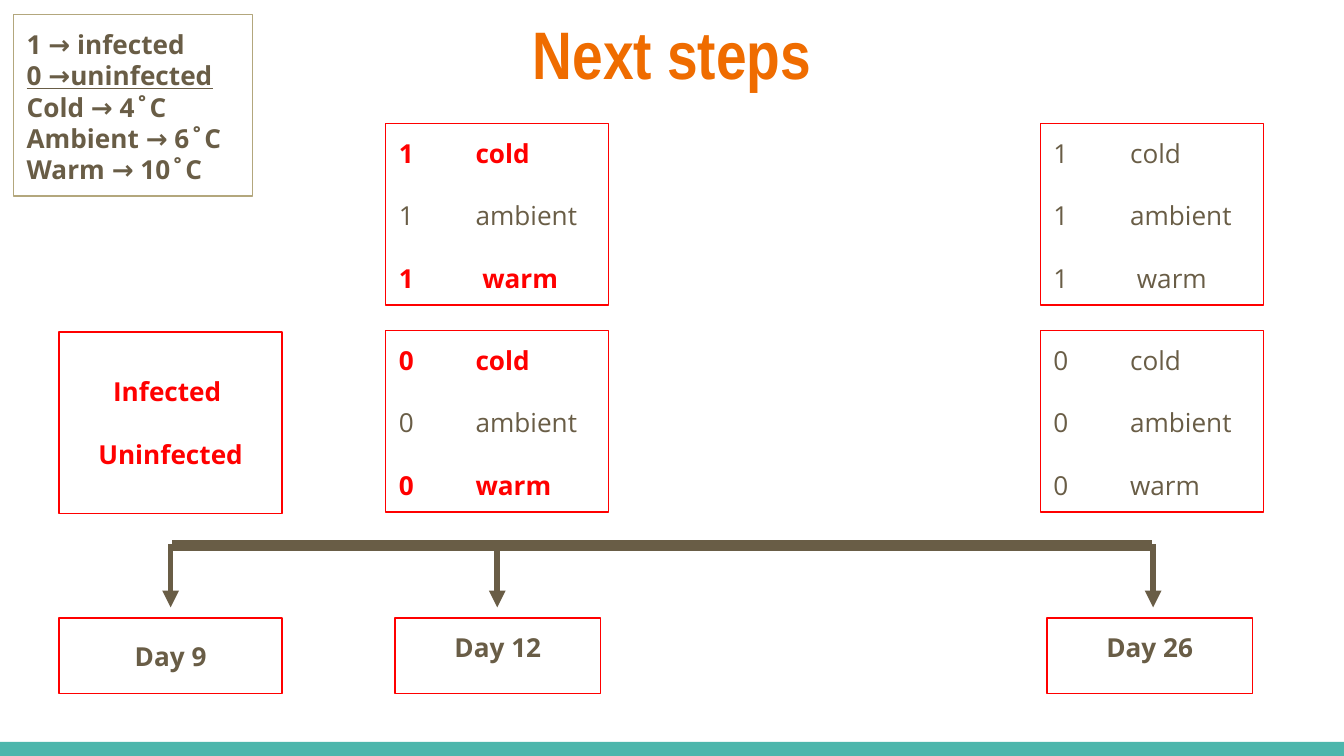
from pptx import Presentation
from pptx.dml.color import RGBColor
from pptx.enum.shapes import MSO_CONNECTOR as Connector, MSO_SHAPE as Shape
from pptx.enum.text import MSO_ANCHOR as Anchor, PP_ALIGN as Align
from pptx.oxml.ns import qn
from pptx.util import Inches, Pt
from lxml.etree import SubElement

RED, BROWN, TAN, ORANGE, TEAL = "FF0000", "695D46", "B3A77D", "EF6C00", "4DB6AC"


def color(value):
    return RGBColor.from_string(value)


def add_box(left, top, width, height, lines, border=RED, align=Align.LEFT,
            anchor=Anchor.TOP, gap=0, size=14, name="Open Sans"):
    place = [Inches(length) for length in (left, top, width, height)]
    if border:
        box = page.shapes.add_shape(Shape.RECTANGLE, *place)
        box.shadow.inherit = False
        box.fill.background()
        box.line.color.rgb = color(border)
        box.line.width = Pt(0.75)
    else:
        box = page.shapes.add_textbox(*place)
    frame = box.text_frame
    frame.word_wrap = True
    frame.vertical_anchor = anchor
    frame.margin_left = frame.margin_right = Inches(0.1)
    frame.margin_top = frame.margin_bottom = Inches(0.1)
    for index, (text, shade, bold) in enumerate(lines):
        para = frame.paragraphs[0] if index == 0 else frame.add_paragraph()
        para.text = text
        para.alignment = align
        para.space_before = Pt(gap if index else 0)
        para.font.name = name
        para.font.size = Pt(size)
        para.font.bold = bold
        para.font.color.rgb = color(shade)
        if "\t" in text:
            tabs = SubElement(para._p.get_or_add_pPr(), qn("a:tabLst"))
            SubElement(tabs, qn("a:tab"), pos=str(Inches(0.57)), algn="l")
            para._p.pPr.insert_element_before(tabs, "a:defRPr")
    return box


deck = Presentation()
deck.slide_width = Inches(10)
deck.slide_height = deck.slide_width * 9 // 16
page = deck.slides.add_slide(deck.slide_layouts[6])

footer = page.shapes.add_shape(Shape.RECTANGLE, 0, Inches(5.52), Inches(10), Inches(0.11))
footer.shadow.inherit = False
footer.fill.solid()
footer.fill.fore_color.rgb = color(TEAL)
footer.line.fill.background()

add_box(0.34, -0.01, 9.32, 0.77, [("Next steps", ORANGE, True)], border=None,
        align=Align.CENTER, size=36, name="Arial Narrow")

timeline = [(1.28, 4.06, 8.57, 4.06, 6)]
timeline += [(x, 4.05, x, 4.52, 3) for x in (1.27, 3.7, 8.58)]
for x1, y1, x2, y2, weight in timeline:
    line = page.shapes.add_connector(Connector.STRAIGHT, Inches(x1), Inches(y1),
                                     Inches(x2), Inches(y2))
    line.line.color.rgb = color(BROWN)
    line.line.width = Pt(weight)
    if x1 == x2:
        SubElement(line.line._get_or_add_ln(), qn("a:tailEnd"), type="triangle")
    SubElement(line._element.spPr, qn("a:effectLst"))

for left, width, day, anchor in [(0.44, 1.66, "Day 9", Anchor.MIDDLE),
                                 (2.94, 1.53, "Day 12", Anchor.TOP),
                                 (7.79, 1.53, "Day 26", Anchor.TOP)]:
    add_box(left, 4.6, width, 0.56, [(day, BROWN, True)], align=Align.CENTER, anchor=anchor)

add_box(0.44, 2.47, 1.66, 1.35, [("Infected ", RED, True), ("Uninfected", RED, True)],
        align=Align.CENTER, anchor=Anchor.MIDDLE, gap=16.8)

key = ["1 → infected", "0 →uninfected", "Cold → 4˚C", "Ambient → 6˚C", "Warm → 10˚C"]
legend = add_box(0.1, 0.11, 1.78, 1.35, [(text, BROWN, True) for text in key], border=TAN)
legend.text_frame.paragraphs[1].font.underline = True

for left, sampled in [(2.87, ["cold", "warm"]), (7.74, [])]:
    for top, status, warm in [(0.92, 1, " warm"), (2.46, 0, "warm")]:
        lines = []
        for label in ("cold", "ambient", warm):
            chosen = label.strip() in sampled
            lines.append((f"{status}\t{label}", RED if chosen else BROWN, chosen))
        add_box(left, top, 1.66, 1.35, lines, gap=16.8)

deck.save("out.pptx")
